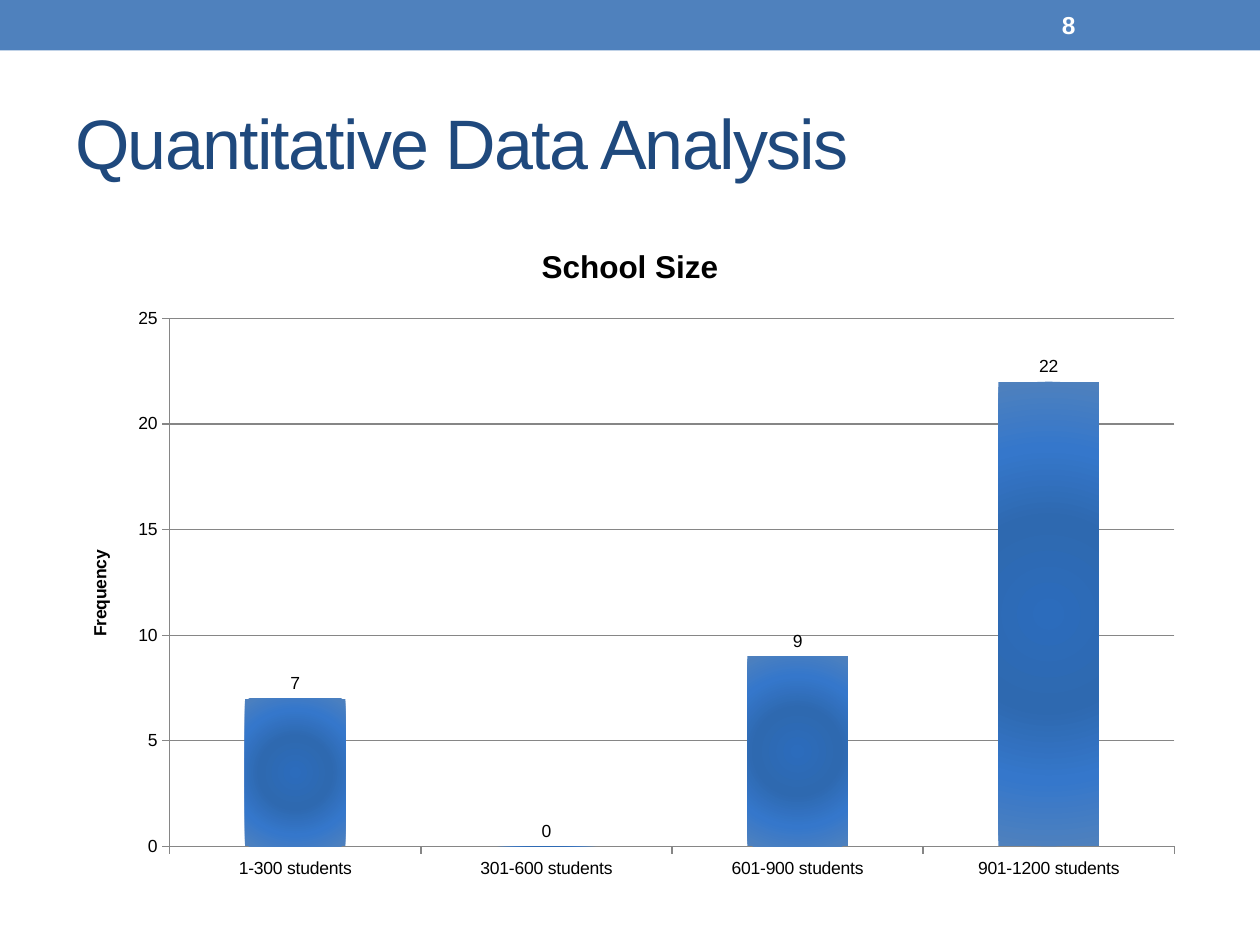
import pptx
import pptx.chart.data
import pptx.dml.color
import pptx.enum.chart
import pptx.enum.shapes
import pptx.enum.text
import pptx.oxml
import pptx.oxml.ns
import pptx.util
from pptx.util import Inches

COLORS = {"bar": "4F81BD", "title": "1F497D", "white": "FFFFFF",
          "black": "000000", "grid": "868686"}
FONT = "Arial"
HEADINGS = [
    ("Quantitative Data Analysis", (0.5, 0.58, 9, 1.08),
     {"size": 40, "bold": False, "color": "title"}, -1),
    ("8", (8.33, 0.02, 1.17, 0.36),
     {"size": 14, "bold": True, "color": "white"}, 0),
]
SCHOOL_SIZES = [("1-300 students", 7), ("301-600 students", 0),
                ("601-900 students", 9), ("901-1200 students", 22)]
BAR_STOPS = [(0, "2C6CBC"), (40, "2E69B0"), (70, "3577CB"), (100, "4F81BD")]


def rgb(name):
    return pptx.dml.color.RGBColor.from_string(COLORS[name])


def set_font(font, size, bold=False, color="black"):
    values = {"name": FONT, "size": pptx.util.Pt(size), "bold": bold}
    for key, value in values.items():
        setattr(font, key, value)
    font.color.rgb = rgb(color)


def add_heading(slide, text, box, style, spacing):
    frame = slide.shapes.add_textbox(*map(Inches, box)).text_frame
    frame.word_wrap = True
    frame.vertical_anchor = pptx.enum.text.MSO_ANCHOR.MIDDLE
    run = frame.paragraphs[0].add_run()
    run.text = text
    set_font(run.font, **style)
    if spacing:
        run.font._element.set("spc", str(spacing * 100))


def set_title(owner, title_part, text, size):
    owner.has_title = True
    run = title_part().text_frame.paragraphs[0].add_run()
    run.text = text
    set_font(run.font, size, bold=True)


def shade_bars(series):
    stops = "".join(f'<a:gs pos="{pos * 1000}"><a:srgbClr val="{color}"/></a:gs>'
                    for pos, color in BAR_STOPS)
    series._element.get_or_add_spPr().append(pptx.oxml.parse_xml(
        f'<a:gradFill {pptx.oxml.ns.nsdecls("a")} rotWithShape="1"><a:gsLst>{stops}</a:gsLst>'
        '<a:path path="circle"><a:fillToRect l="50000" t="50000" r="50000" b="50000"/>'
        '</a:path></a:gradFill>'))


def add_school_chart(slide):
    sizes = pptx.chart.data.CategoryChartData()
    sizes.categories = [label for label, _ in SCHOOL_SIZES]
    sizes.add_series("Series 1", [count for _, count in SCHOOL_SIZES])
    chart = slide.shapes.add_chart(
        pptx.enum.chart.XL_CHART_TYPE.COLUMN_CLUSTERED,
        *map(Inches, (0.5, 1.75, 9, 5.33)), sizes).chart
    chart.has_legend = False
    set_font(chart.font, 10)
    frequency = chart.value_axis
    set_title(chart, lambda: chart.chart_title, "School Size", 18)
    set_title(frequency, lambda: frequency.axis_title, "Frequency", 10)

    for key, value in {"minimum_scale": 0, "maximum_scale": 25, "major_unit": 5,
                       "has_major_gridlines": True}.items():
        setattr(frequency, key, value)
    for axis in (frequency, chart.category_axis):
        axis.major_tick_mark = pptx.enum.chart.XL_TICK_MARK.OUTSIDE
    for part in (frequency, chart.category_axis, frequency.major_gridlines):
        part.format.line.color.rgb = rgb("grid")
        part.format.line.width = pptx.util.Pt(0.75)

    plot = chart.plots[0]
    plot.gap_width = 150
    plot.vary_by_categories = False
    shade_bars(plot.series[0])
    labels = plot.series[0].data_labels
    labels.show_value = True
    labels.position = pptx.enum.chart.XL_LABEL_POSITION.OUTSIDE_END
    set_font(labels.font, 10)


def main():
    deck = pptx.Presentation()
    deck.slide_width, deck.slide_height = Inches(10), Inches(7.5)
    slide = deck.slides.add_slide(deck.slide_layouts[6])

    band = slide.shapes.add_shape(pptx.enum.shapes.MSO_SHAPE.RECTANGLE,
                                  *map(Inches, (0, 0, 10, 0.4)))
    band.shadow.inherit = False
    band.fill.solid()
    band.fill.fore_color.rgb = rgb("bar")
    band.line.fill.background()

    for heading in HEADINGS:
        add_heading(slide, *heading)
    add_school_chart(slide)
    deck.save("out.pptx")


if __name__ == "__main__":
    main()
